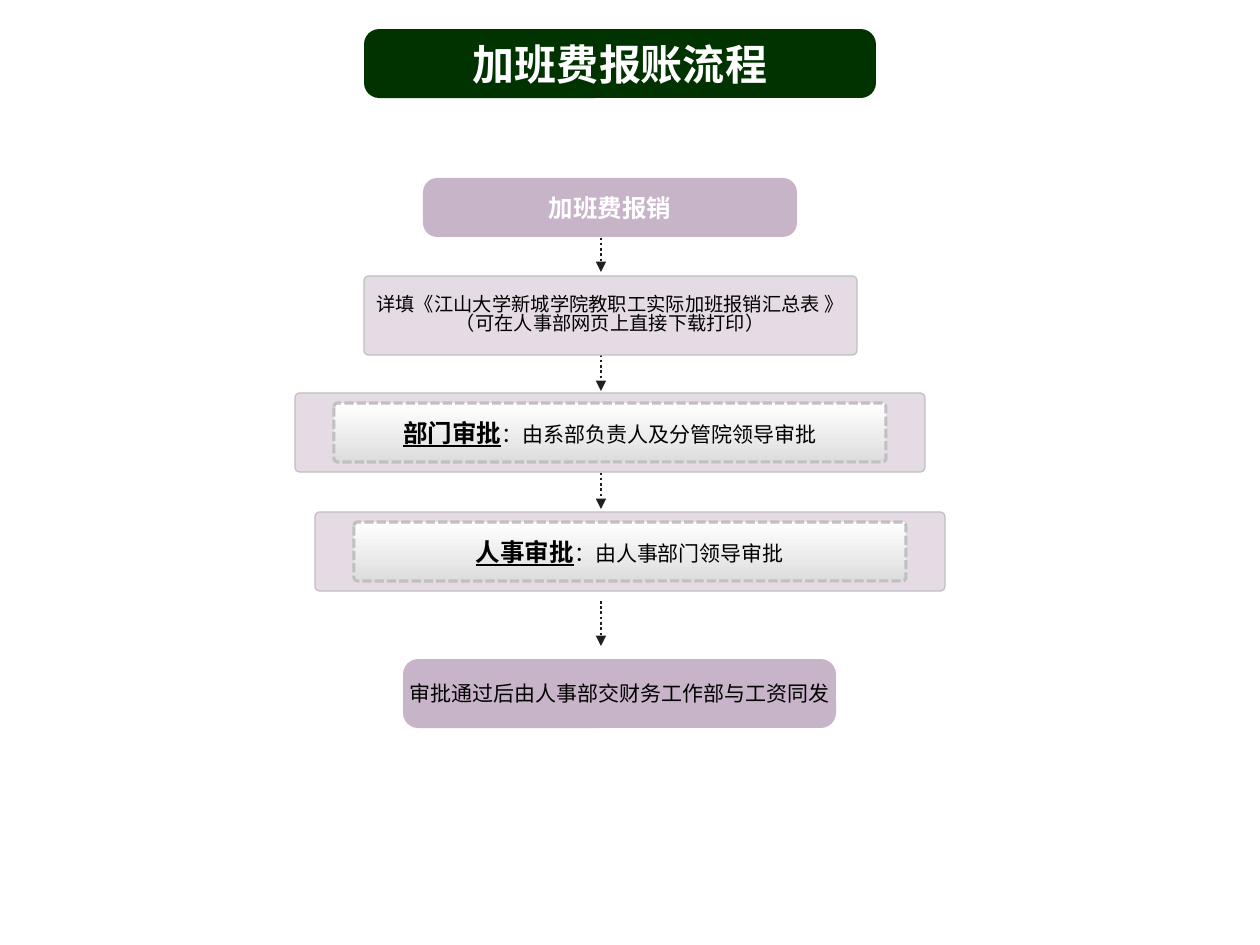
import dataclasses

import pptx
import pptx.dml.color
import pptx.enum.dml
import pptx.enum.shapes
import pptx.enum.text
import pptx.oxml
import pptx.oxml.ns
import pptx.util

EMU_PER_PX = 914400 / 126
DASH = pptx.enum.dml.MSO_LINE


@dataclasses.dataclass(frozen=True)
class Theme:
    font: str = "Noto Sans CJK SC"
    title_fill: str = "003300"
    mauve: str = "C8B4C8"
    pale: str = "E5DBE5"
    border: str = "C0C0C0"
    shade: str = "DDDDDD"
    arrow: str = "202020"
    black: str = "000000"
    white: str = "FFFFFF"
    title: int = 24
    heading: int = 14
    body: int = 12
    note: int = 11


@dataclasses.dataclass(frozen=True)
class Span:
    text: str
    size: int
    color: str
    bold: bool = False
    underline: bool = False


def px(length):
    return pptx.util.Emu(round(length * EMU_PER_PX))


def rgb(color):
    return pptx.dml.color.RGBColor.from_string(color)


def add_xml(parent, tag, **attributes):
    element = pptx.oxml.parse_xml(f"<{tag} {pptx.oxml.ns.nsdecls('a')}/>")
    for name, value in attributes.items():
        element.set(name, value)
    parent.append(element)


class FlowPage:
    def __init__(self, page, theme):
        self.page = page
        self.theme = theme

    def box(self, left, top, width, height, fill, radius, lines=(), spacing=None):
        """Add a borderless rounded box; each line is a list of spans."""
        box = self.page.shapes.add_shape(
            pptx.enum.shapes.MSO_SHAPE.ROUNDED_RECTANGLE,
            px(left), px(top), px(width), px(height))
        box.adjustments[0] = radius
        box.shadow.inherit = False
        box.fill.solid()
        box.fill.fore_color.rgb = rgb(fill)
        box.line.fill.background()
        self.add_lines(box.text_frame, lines, spacing)
        return box

    def add_lines(self, frame, lines, spacing):
        frame.word_wrap = False
        frame.vertical_anchor = pptx.enum.text.MSO_ANCHOR.MIDDLE
        for index, spans in enumerate(lines):
            para = frame.add_paragraph() if index else frame.paragraphs[0]
            para.alignment = pptx.enum.text.PP_ALIGN.CENTER
            if spacing:
                para.line_spacing = spacing
            for span in spans:
                run = para.add_run()
                run.text = span.text
                run.font.size = pptx.util.Pt(span.size)
                run.font.bold = span.bold
                run.font.underline = span.underline
                run.font.color.rgb = rgb(span.color)
                run.font.name = self.theme.font
                add_xml(run.font._element, "a:ea", typeface=self.theme.font)

    def outline(self, box, weight, dash=None):
        box.line.color.rgb = rgb(self.theme.border)
        box.line.width = pptx.util.Pt(weight)
        if dash:
            box.line.dash_style = dash

    def approval(self, left, top, name, detail):
        """Add a pale panel holding a dashed, shaded label."""
        theme = self.theme
        self.outline(self.box(left, top, 630, 79, theme.pale, 0.06), 0.75)
        spans = [Span(name, theme.heading, theme.black, True, True),
                 Span(detail, theme.body, theme.black)]
        label = self.box(left + 39, top + 10, 552, 59, theme.white, 0.06, [spans])
        label.fill.gradient()
        label.fill.gradient_angle = 270
        for stop, color in zip(label.fill.gradient_stops, (theme.white, theme.shade)):
            stop.color.rgb = rgb(color)
        self.outline(label, 1.75, DASH.SQUARE_DOT)

    def arrow(self, x, top, bottom):
        arrow = self.page.shapes.add_connector(
            pptx.enum.shapes.MSO_CONNECTOR.STRAIGHT,
            px(x), px(top), px(x), px(bottom))
        arrow.line.color.rgb = rgb(self.theme.arrow)
        arrow.line.width = pptx.util.Pt(1.5)
        arrow.line.dash_style = DASH.ROUND_DOT
        add_xml(arrow.line._get_or_add_ln(), "a:tailEnd", type="triangle")
        add_xml(arrow._element.spPr, "a:effectLst")


def main():
    deck = pptx.Presentation()
    deck.slide_width = px(1260)
    deck.slide_height = px(945)
    theme = Theme()
    flow = FlowPage(deck.slides.add_slide(deck.slide_layouts[6]), theme)

    for top, bottom in ((227, 272), (344, 391), (462, 509), (601, 646)):
        flow.arrow(601, top, bottom)

    flow.box(364, 29, 512, 69, theme.title_fill, 0.22,
             [[Span("加班费报账流程", theme.title, theme.white, True)]])
    flow.box(423, 178, 374, 59, theme.mauve, 0.24,
             [[Span("加班费报销", theme.heading, theme.white, True)]])
    form = flow.box(364, 276, 493, 79, theme.pale, 0.06, [
        [Span("详填《江山大学新城学院教职工实际加班报销汇总表 》", theme.note, theme.black)],
        [Span("（可在人事部网页上直接下载打印）", theme.note, theme.black)],
    ], spacing=0.83)
    flow.outline(form, 0.75)
    flow.approval(295, 393, "部门审批", "：由系部负责人及分管院领导审批")
    flow.approval(315, 512, "人事审批", "：由人事部门领导审批")
    flow.box(403, 659, 433, 69, theme.mauve, 0.22,
             [[Span("审批通过后由人事部交财务工作部与工资同发", theme.body, theme.black)]])

    deck.save("out.pptx")


if __name__ == "__main__":
    main()
